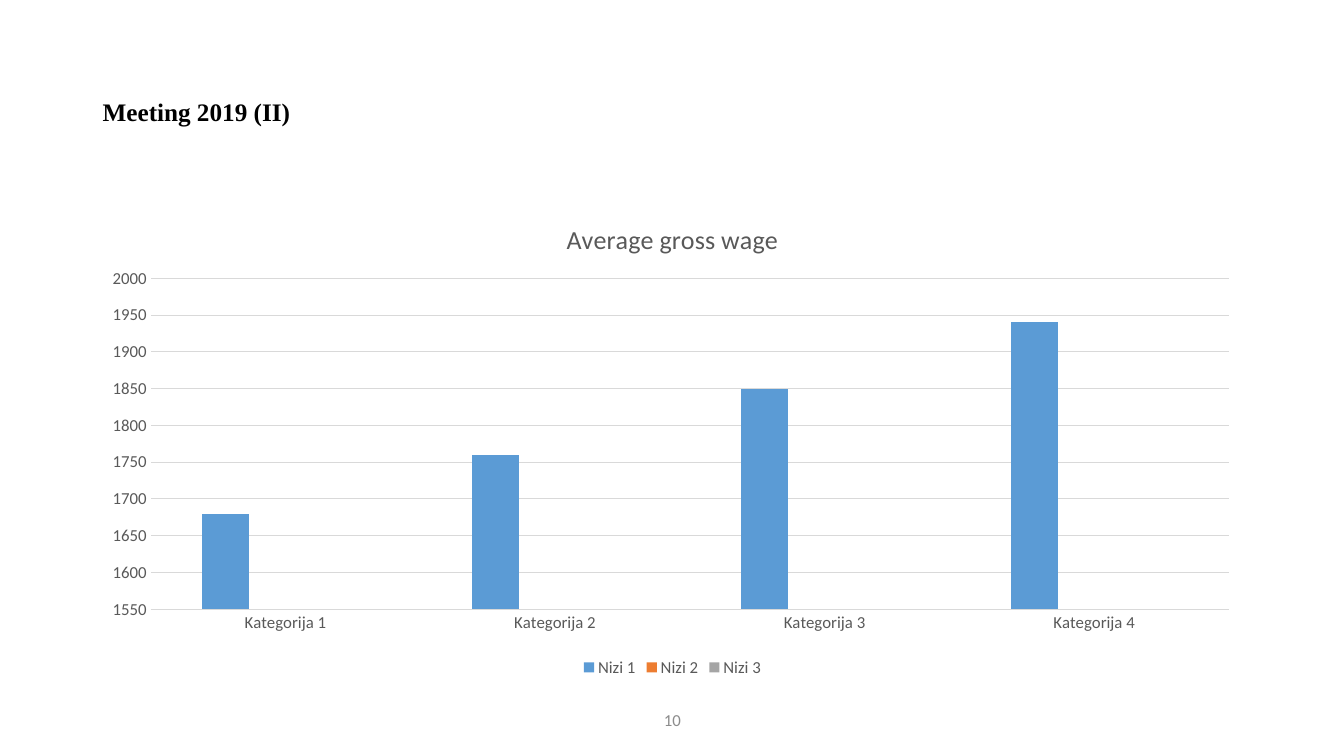
import pptx
import pptx.util
import pptx.chart.data
import pptx.dml.color
import pptx.enum.chart
import pptx.enum.text
import pptx.oxml

RGB = pptx.dml.color.RGBColor
BLACK = RGB(0x00, 0x00, 0x00)
TEXT = RGB(0x59, 0x59, 0x59)
PALE = RGB(0x8C, 0x8C, 0x8C)
GRID = RGB(0xD9, 0xD9, 0xD9)
BLUE = RGB(0x5B, 0x9B, 0xD5)
ORANGE = RGB(0xED, 0x7D, 0x31)
GRAY = RGB(0xA5, 0xA5, 0xA5)

PX = 9144  # 100 px to the inch
ALIGN = pptx.enum.text.PP_ALIGN
CHART = pptx.enum.chart

CATS = [f"Kategorija {n}" for n in range(1, 5)]
SERIES = [
    ("Nizi 1", [1680, 1760, 1850, 1940], BLUE),
    ("Nizi 2", [None] * 4, ORANGE),
    ("Nizi 3", [None] * 4, GRAY),
]
# Share of the chart taken by the plot area
PLOT = {"x": 0.05, "y": 0.16, "w": 0.93, "h": 0.69}


def scale(box):
    return [pptx.util.Emu(side * PX) for side in box]


def style(font, size, color, name="Calibri", bold=False):
    font.size = pptx.util.Pt(size)
    font.color.rgb = color
    font.name = name
    font.bold = bold


def add_text(slide, box, text, align, *look):
    frame = slide.shapes.add_textbox(*scale(box)).text_frame
    frame.word_wrap = True
    frame.vertical_anchor = pptx.enum.text.MSO_ANCHOR.MIDDLE
    frame.text = text
    line = frame.paragraphs[0]
    line.alignment = align
    line.line_spacing = 0.9
    style(line.runs[0].font, *look)


def place_plot(chart):
    area = chart._chartSpace.chart.plotArea
    for old in area.findall(pptx.oxml.ns.qn("c:layout")):
        area.remove(old)
    sides = "".join(f'<c:{key} val="{val}"/>' for key, val in PLOT.items())
    area.insert(0, pptx.oxml.parse_xml(
        f'<c:layout {pptx.oxml.ns.nsdecls("c")}><c:manualLayout>'
        '<c:layoutTarget val="inner"/><c:xMode val="edge"/>'
        f'<c:yMode val="edge"/>{sides}</c:manualLayout></c:layout>'))


def add_wages(slide, box):
    data = pptx.chart.data.CategoryChartData()
    data.categories = CATS
    for name, vals, _ in SERIES:
        data.add_series(name, vals)
    kind = CHART.XL_CHART_TYPE.COLUMN_CLUSTERED
    chart = slide.shapes.add_chart(kind, *scale(box), data).chart
    style(chart.font, 10, BLACK)

    # Title and legend
    chart.has_title = True
    title = chart.chart_title
    title.include_in_layout = False
    title.text_frame.text = "Average gross wage"
    style(title.text_frame.paragraphs[0].runs[0].font, 18.6, TEXT)
    chart.has_legend = True
    chart.legend.position = CHART.XL_LEGEND_POSITION.BOTTOM
    chart.legend.include_in_layout = False
    style(chart.legend.font, 12, TEXT)

    # Columns
    plot = chart.plots[0]
    plot.gap_width = 219
    plot.overlap = -27
    plot.vary_by_categories = False
    for bars, (_, _, color) in zip(plot.series, SERIES):
        bars.format.fill.solid()
        bars.format.fill.fore_color.rgb = color

    # Axes
    cats, vals = chart.category_axis, chart.value_axis
    for axis in (cats, vals):
        axis.major_tick_mark = CHART.XL_TICK_MARK.NONE
        axis.minor_tick_mark = CHART.XL_TICK_MARK.NONE
        style(axis.tick_labels.font, 12, TEXT)
    vals.minimum_scale, vals.maximum_scale = 1550, 2000
    vals.major_unit = 50
    vals.format.line.fill.background()
    vals.has_major_gridlines = True
    for line in (cats.format.line, vals.major_gridlines.format.line):
        line.color.rgb = GRID
        line.width = pptx.util.Pt(0.75)
    place_plot(chart)


def main():
    deck = pptx.Presentation()
    deck.slide_width, deck.slide_height = scale((1333, 750))
    slide = deck.slides.add_slide(deck.slide_layouts[6])
    add_text(slide, (92, 40, 1150, 145), "Meeting 2019 (II)", ALIGN.LEFT,
             18, BLACK, "Times New Roman", True)
    add_wages(slide, (92, 200, 1150, 476))
    add_text(slide, (442, 695, 450, 40), "10", ALIGN.CENTER, 12, PALE)
    deck.save("out.pptx")


if __name__ == "__main__":
    main()
